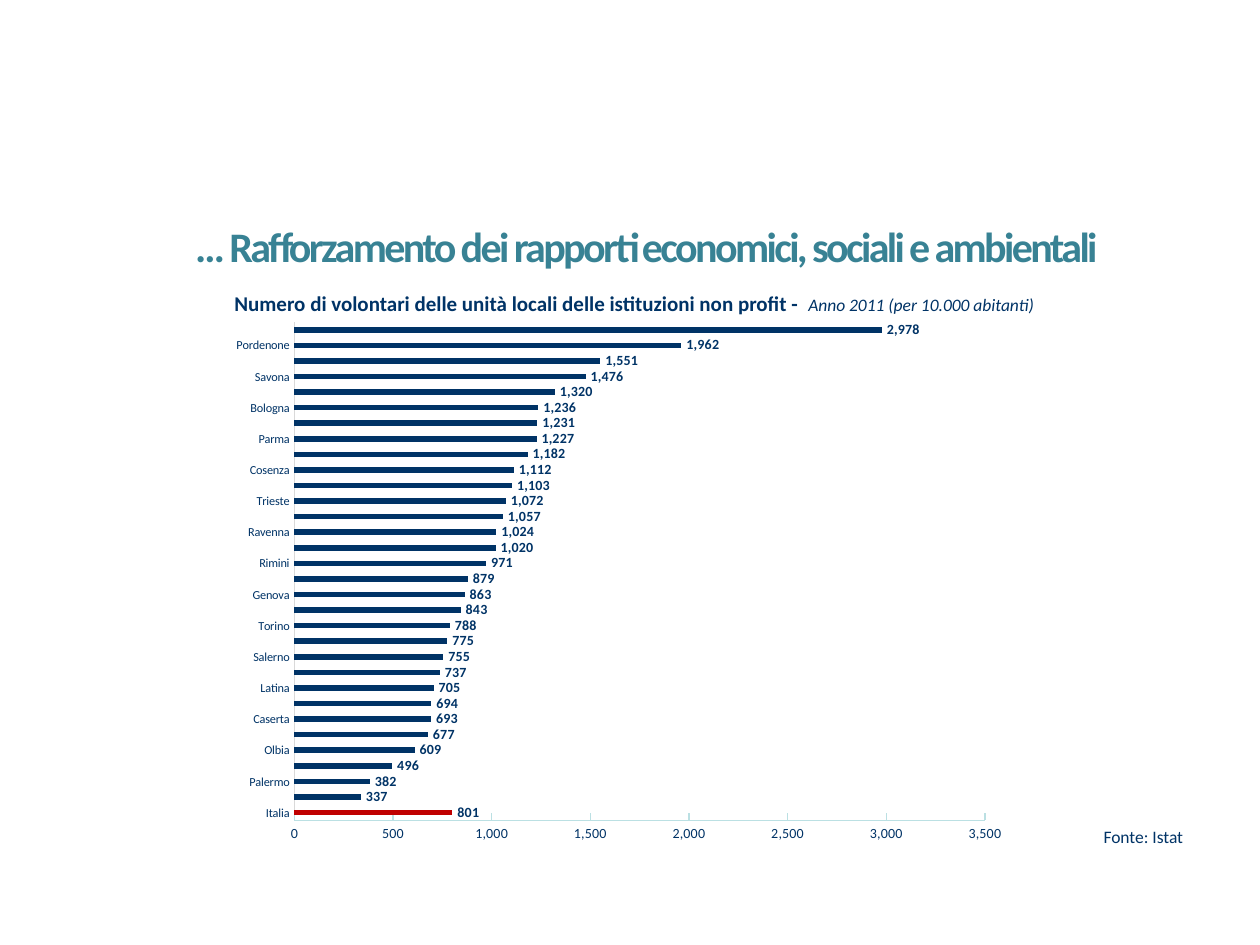
"""Build the slide on volunteers in local non-profit units."""
from dataclasses import dataclass

from lxml import etree
from pptx import Presentation
from pptx.chart.data import CategoryChartData
from pptx.dml.color import RGBColor
from pptx.enum.chart import XL_CHART_TYPE, XL_LABEL_POSITION, XL_TICK_MARK
from pptx.enum.text import MSO_ANCHOR, MSO_AUTO_SIZE, PP_ALIGN
from pptx.oxml.ns import qn
from pptx.util import Inches, Pt

BAR = XL_CHART_TYPE.BAR_CLUSTERED
OUTSIDE = XL_LABEL_POSITION.OUTSIDE_END
NO_TICK, IN_TICK = XL_TICK_MARK.NONE, XL_TICK_MARK.INSIDE
MIDDLE, BOTTOM = MSO_ANCHOR.MIDDLE, MSO_ANCHOR.BOTTOM
NO_FIT = MSO_AUTO_SIZE.NONE
CENTER = PP_ALIGN.CENTER

NAVY = RGBColor(0x00, 0x33, 0x66)
TEAL = RGBColor(0x38, 0x82, 0x94)
RED = RGBColor(0xC0, 0x00, 0x00)
GREY = RGBColor(0xD9, 0xD9, 0xD9)
PALE = RGBColor(0xBB, 0xE0, 0xE3)
WHITE = RGBColor(0xFF, 0xFF, 0xFF)
FACE = "Calibri"
NUMBER = "#,##0"


@dataclass(frozen=True)
class Box:
    left: float
    top: float
    width: float
    height: float

    def frame(self) -> tuple:
        return tuple(Inches(n) for n in (self.left, self.top, self.width, self.height))


@dataclass(frozen=True)
class Place:
    name: str
    value: int


PLACES = [
    Place("Italia", 801), Place("Napoli", 337), Place("Palermo", 382),
    Place("Brindisi", 496), Place("Olbia", 609), Place("Carbonia", 677),
    Place("Caserta", 693), Place("Isernia", 694), Place("Latina", 705),
    Place("Benevento", 737), Place("Salerno", 755), Place("Roma", 775),
    Place("Torino", 788), Place("Crotone", 843), Place("Genova", 863),
    Place("Milano", 879), Place("Rimini", 971), Place("Villacidro", 1020),
    Place("Ravenna", 1024), Place("Novara", 1057), Place("Trieste", 1072),
    Place("Grosseto", 1103), Place("Cosenza", 1112), Place("Venezia", 1182),
    Place("Parma", 1227), Place("Varese", 1231), Place("Bologna", 1236),
    Place("Cagliari", 1320), Place("Savona", 1476), Place("Firenze", 1551),
    Place("Pordenone", 1962), Place("Bolzano / Bozen", 2978),
]


def style(font, size: float, color: RGBColor = NAVY, bold: bool = False) -> None:
    font.name, font.size, font.bold = FACE, Pt(size), bold
    font.color.rgb = color


def add_title(slide, box: Box, text: str) -> None:
    title = slide.shapes.title
    title.left, title.top, title.width, title.height = box.frame()
    frame = title.text_frame
    frame.auto_size, frame.vertical_anchor = NO_FIT, MIDDLE
    line = frame.paragraphs[0]
    line.alignment = CENTER
    run = line.add_run()
    run.text = text
    run._r.get_or_add_rPr().set("spc", "-150")
    style(line.font, 24, TEAL, True)


def add_head(slide, box: Box, text: str, note: str) -> None:
    table = slide.shapes.add_table(1, 1, *box.frame()).table
    cell = table.cell(0, 0)
    cell.fill.solid()
    cell.fill.fore_color.rgb = WHITE
    cell.vertical_anchor = BOTTOM
    cell.margin_left = cell.margin_right = cell.margin_top = Inches(0.01)
    cell.margin_bottom = 0
    line = cell.text_frame.paragraphs[0]
    for words, size, main in ((text, 12, True), (note, 10, False)):
        run = line.add_run()
        run.text = words
        style(run.font, size, bold=main)
        run.font.italic = not main


def add_note(slide, box: Box, text: str) -> None:
    frame = slide.shapes.add_textbox(*box.frame()).text_frame
    frame.word_wrap = True
    line = frame.paragraphs[0]
    line.text = text
    style(line.font, 10)


def set_axis(axis, size: float, color: RGBColor, tick) -> None:
    axis.has_major_gridlines = False
    axis.major_tick_mark, axis.minor_tick_mark = tick, NO_TICK
    axis.format.line.color.rgb = color
    axis.format.line.width = Pt(0.75)
    style(axis.tick_labels.font, size)


def set_plot(chart, box: Box) -> None:
    area = chart._chartSpace.chart.plotArea
    for old in area.findall(qn("c:layout")):
        area.remove(old)
    layout = etree.Element(qn("c:layout"))
    area.insert(0, layout)
    manual = etree.SubElement(layout, qn("c:manualLayout"))
    parts = (("layoutTarget", "inner"), ("xMode", "edge"), ("yMode", "edge"),
             ("x", box.left), ("y", box.top), ("w", box.width), ("h", box.height))
    for tag, value in parts:
        etree.SubElement(manual, qn(f"c:{tag}")).set("val", str(value))


def add_bars(slide, box: Box, places: list[Place]) -> None:
    data = CategoryChartData(number_format=NUMBER)
    data.categories = [place.name for place in places]
    data.add_series("Series 1", [place.value for place in places])
    chart = slide.shapes.add_chart(BAR, *box.frame(), data).chart
    chart.has_legend = chart.has_title = False
    style(chart.font, 10)
    set_plot(chart, Box(0.09, 0.02, 0.87, 0.92))

    set_axis(chart.category_axis, 7, GREY, NO_TICK)
    scale = chart.value_axis
    set_axis(scale, 8, PALE, IN_TICK)
    scale.minimum_scale, scale.maximum_scale, scale.major_unit = 0, 3500, 500
    scale.tick_labels.number_format = NUMBER
    scale.tick_labels.number_format_is_linked = False

    plot = chart.plots[0]
    plot.gap_width, plot.vary_by_categories = 182, False
    bars = plot.series[0]
    for part, color in ((bars, NAVY), (bars.points[0], RED)):
        part.format.fill.solid()
        part.format.fill.fore_color.rgb = color
    labels = bars.data_labels
    labels.show_value, labels.position = True, OUTSIDE
    labels.number_format, labels.number_format_is_linked = NUMBER, False
    style(labels.font, 8, bold=True)


def main() -> None:
    deck = Presentation()
    deck.slide_width, deck.slide_height = Inches(10), Inches(7.5)
    slide = deck.slides.add_slide(deck.slide_layouts[5])
    add_title(slide, Box(0.59, 1.7, 9.13, 0.5),
              "… Rafforzamento dei rapporti economici, sociali e ambientali ")
    add_head(slide, Box(1.85, 2.18, 6.38, 0.34),
             "Numero di volontari delle unità locali delle istituzioni non profit -  ",
             "Anno 2011 (per 10.000 abitanti)")
    add_note(slide, Box(8.66, 6.51, 1.22, 0.27), "Fonte: Istat")
    add_bars(slide, Box(1.77, 2.47, 6.3, 4.3), PLACES)
    deck.save("out.pptx")


if __name__ == "__main__":
    main()
